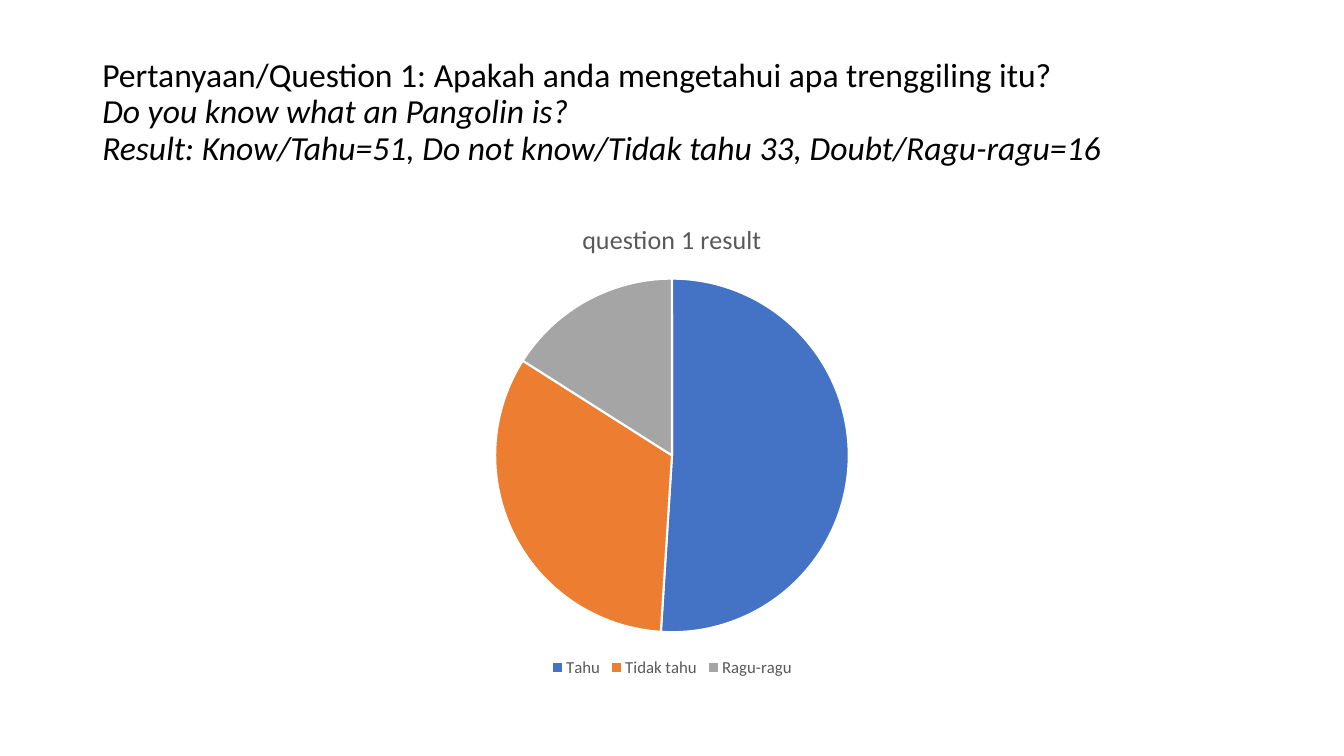
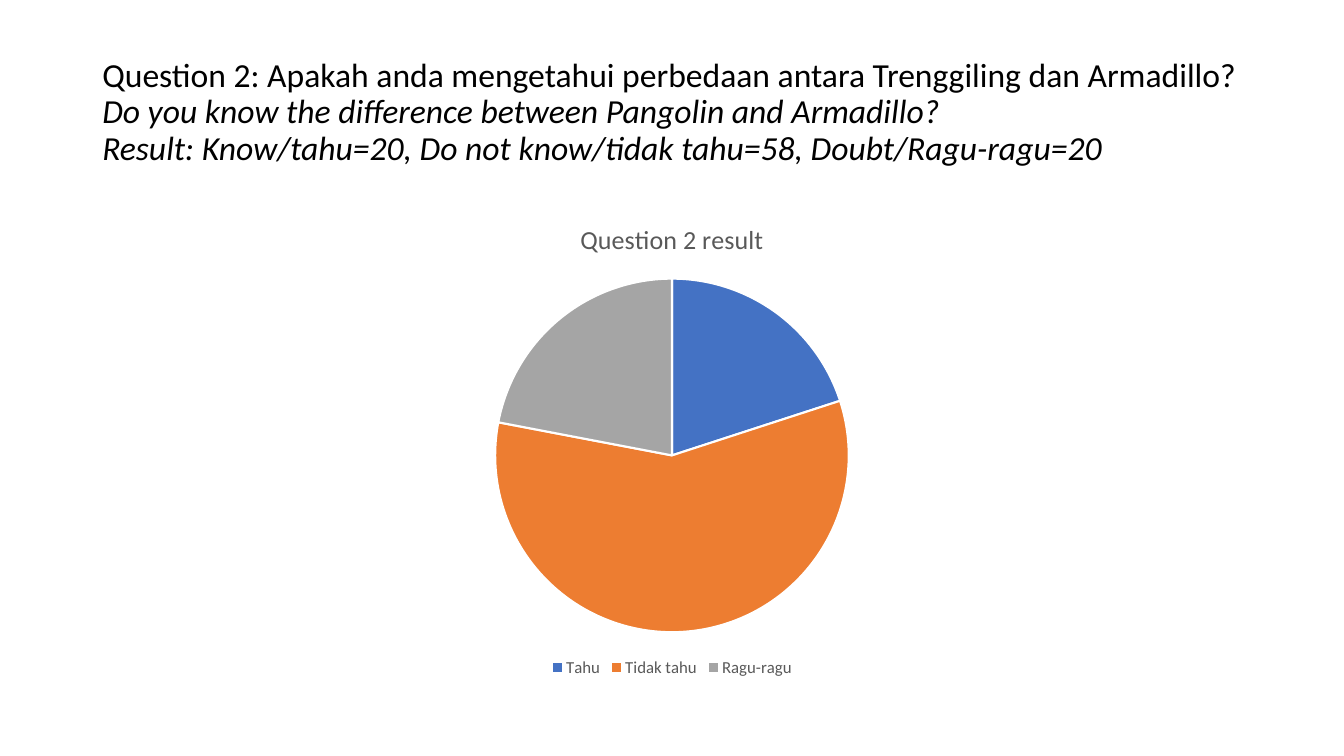
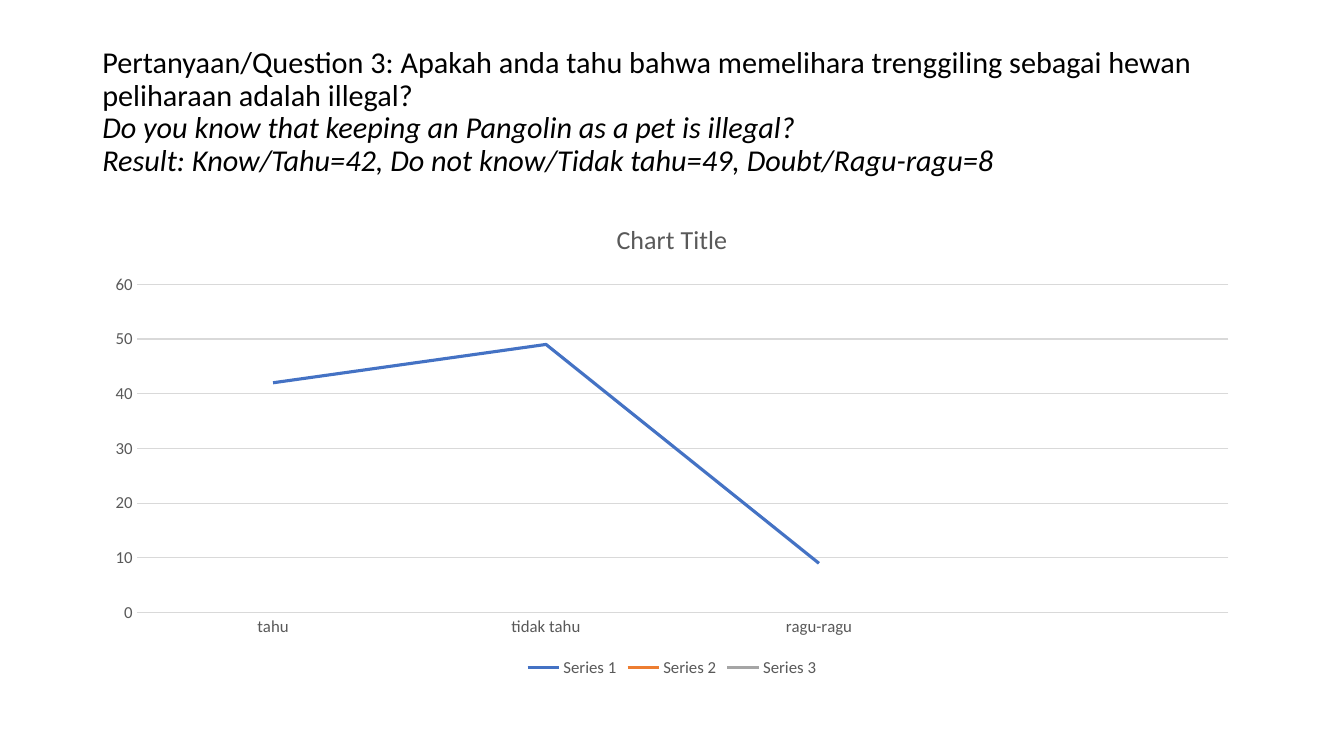
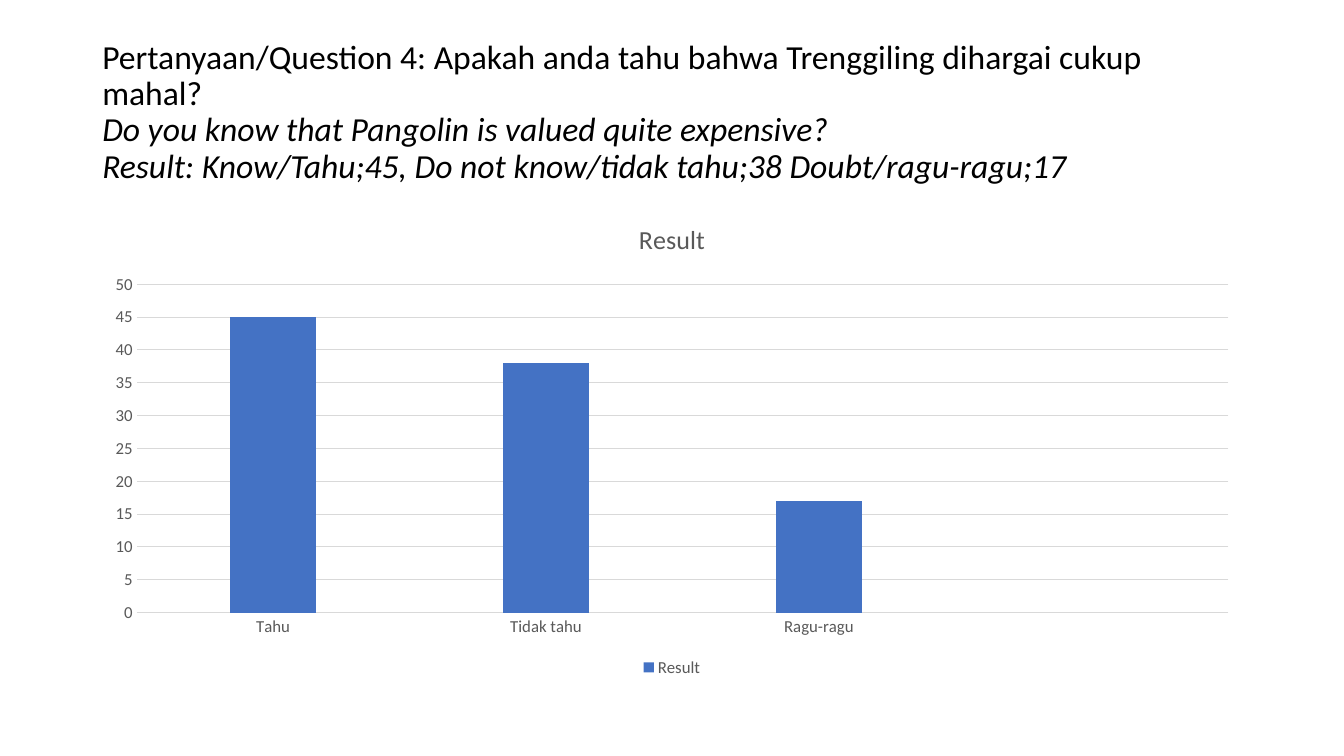
from dataclasses import dataclass

from pptx import Presentation
from pptx.chart.data import CategoryChartData
from pptx.dml.color import RGBColor
from pptx.enum.chart import XL_CHART_TYPE, XL_LEGEND_POSITION, XL_TICK_MARK
from pptx.enum.text import MSO_ANCHOR
from pptx.util import Emu, Pt

PIE = XL_CHART_TYPE.PIE
LINE = XL_CHART_TYPE.LINE
COLUMN = XL_CHART_TYPE.COLUMN_CLUSTERED
BOTTOM = XL_LEGEND_POSITION.BOTTOM
NO_TICK = XL_TICK_MARK.NONE
MIDDLE = MSO_ANCHOR.MIDDLE


@dataclass(frozen=True)
class Theme:
    font: str = "Calibri"
    ink: str = "000000"
    muted: str = "595959"
    grid: str = "D9D9D9"
    paper: str = "FFFFFF"
    accents: tuple = ("4472C4", "ED7D31", "A5A5A5")
    heading: float = 24
    long_heading: float = 21.6
    chart_title: float = 18.6
    label: float = 12
    hairline: float = 0.75
    slice_border: float = 1.5
    trend: float = 2.25


THEME = Theme()
PX = 9525
SLIDE_SIZE = (1280, 720)
HEADING_BOX = (88, 38, 1104, 139)
CHART_BOX = (88, 192, 1104, 457)

ANSWERS = ["Tahu", "Tidak tahu", "Ragu-ragu"]

QUESTIONS = [
    {
        "question": "Pertanyaan/Question 1: Apakah anda mengetahui apa trenggiling itu?",
        "translation": "Do you know what an Pangolin is?",
        "result": "Result: Know/Tahu=51, Do not know/Tidak tahu 33, Doubt/Ragu-ragu=16",
        "size": THEME.heading,
        "kind": PIE,
        "title": "question 1 result",
        "answers": ANSWERS,
        "series": {"question 1 result": [51, 33, 16]},
    },
    {
        "question": "Question 2: Apakah anda mengetahui perbedaan antara Trenggiling dan Armadillo?",
        "translation": "Do you know the difference between Pangolin and Armadillo?",
        "result": "Result: Know/tahu=20, Do not know/tidak tahu=58, Doubt/Ragu-ragu=20",
        "size": THEME.heading,
        "kind": PIE,
        "title": "Question 2 result",
        "answers": ANSWERS,
        "series": {"Question 2 result": [20, 58, 22]},
    },
    {
        "question": "Pertanyaan/Question 3: Apakah anda tahu bahwa memelihara trenggiling "
                    "sebagai hewan peliharaan adalah illegal?",
        "translation": "Do you know that keeping an Pangolin as a pet is illegal?",
        "result": "Result: Know/Tahu=42, Do not know/Tidak tahu=49, Doubt/Ragu-ragu=8",
        "size": THEME.long_heading,
        "kind": LINE,
        "title": "Chart Title",
        "answers": ["tahu", "tidak tahu", "ragu-ragu", ""],
        "series": {
            "Series 1": [42, 49, 9, None],
            "Series 2": [None] * 4,
            "Series 3": [None] * 4,
        },
    },
    {
        "question": "Pertanyaan/Question 4: Apakah anda tahu bahwa Trenggiling dihargai cukup mahal?",
        "translation": "Do you know that Pangolin is valued quite expensive?",
        "result": "Result: Know/Tahu;45, Do not know/tidak tahu;38 Doubt/ragu-ragu;17",
        "size": THEME.heading,
        "kind": COLUMN,
        "title": "Result",
        "answers": ANSWERS + [""],
        "series": {"Result": [45, 38, 17, None]},
    },
]


def rgb(color):
    return RGBColor.from_string(color)


def place(box):
    return [Emu(length * PX) for length in box]


def style_font(font, size, color, italic=False):
    font.name = THEME.font
    font.size = Pt(size)
    font.bold = False
    font.italic = italic
    font.color.rgb = rgb(color)


def style_line(line, color, width):
    line.color.rgb = rgb(color)
    line.width = Pt(width)


def style_fill(fill, color):
    fill.solid()
    fill.fore_color.rgb = rgb(color)


def write(paragraph, text, *, size, color=THEME.ink, italic=False):
    run = paragraph.add_run()
    run.text = text
    style_font(run.font, size, color, italic)


def add_heading(slide, entry):
    frame = slide.shapes.add_textbox(*place(HEADING_BOX)).text_frame
    frame.word_wrap = True
    frame.vertical_anchor = MIDDLE
    heading = frame.paragraphs[0]
    heading.line_spacing = 0.9
    write(heading, entry["question"], size=entry["size"])
    for part in ("translation", "result"):
        heading.add_line_break()
        write(heading, entry[part], size=entry["size"], italic=True)


def style_axes(chart):
    for axis in (chart.category_axis, chart.value_axis):
        axis.major_tick_mark = axis.minor_tick_mark = NO_TICK
        style_font(axis.tick_labels.font, THEME.label, THEME.muted)
    style_line(chart.category_axis.format.line, THEME.grid, THEME.hairline)
    chart.value_axis.format.line.fill.background()
    chart.value_axis.has_major_gridlines = True
    style_line(chart.value_axis.major_gridlines.format.line, THEME.grid, THEME.hairline)


def style_series(plot, kind):
    plot.vary_by_categories = kind == PIE
    if kind == PIE:
        for index, color in enumerate(THEME.accents):
            piece = plot.series[0].points[index].format
            style_fill(piece.fill, color)
            style_line(piece.line, THEME.paper, THEME.slice_border)
        return
    for series, color in zip(plot.series, THEME.accents):
        if kind == LINE:
            series.smooth = False
            style_line(series.format.line, color, THEME.trend)
        else:
            style_fill(series.format.fill, color)
    if kind == COLUMN:
        plot.gap_width = 219
        plot.overlap = -27


def add_result_chart(slide, entry):
    data = CategoryChartData()
    data.categories = entry["answers"]
    for name, values in entry["series"].items():
        data.add_series(name, values)
    kind = entry["kind"]
    chart = slide.shapes.add_chart(kind, *place(CHART_BOX), data).chart
    style_font(chart.font, THEME.label, THEME.muted)
    chart.has_title = True
    write(chart.chart_title.text_frame.paragraphs[0], entry["title"],
          size=THEME.chart_title, color=THEME.muted)
    chart.has_legend = True
    chart.legend.position = BOTTOM
    chart.legend.include_in_layout = False
    style_font(chart.legend.font, THEME.label, THEME.muted)
    if kind != PIE:
        style_axes(chart)
    style_series(chart.plots[0], kind)


def main():
    deck = Presentation()
    deck.slide_width, deck.slide_height = place(SLIDE_SIZE)
    blank = deck.slide_layouts[6]
    for entry in QUESTIONS:
        slide = deck.slides.add_slide(blank)
        add_heading(slide, entry)
        add_result_chart(slide, entry)
    deck.save("out.pptx")


if __name__ == "__main__":
    main()
